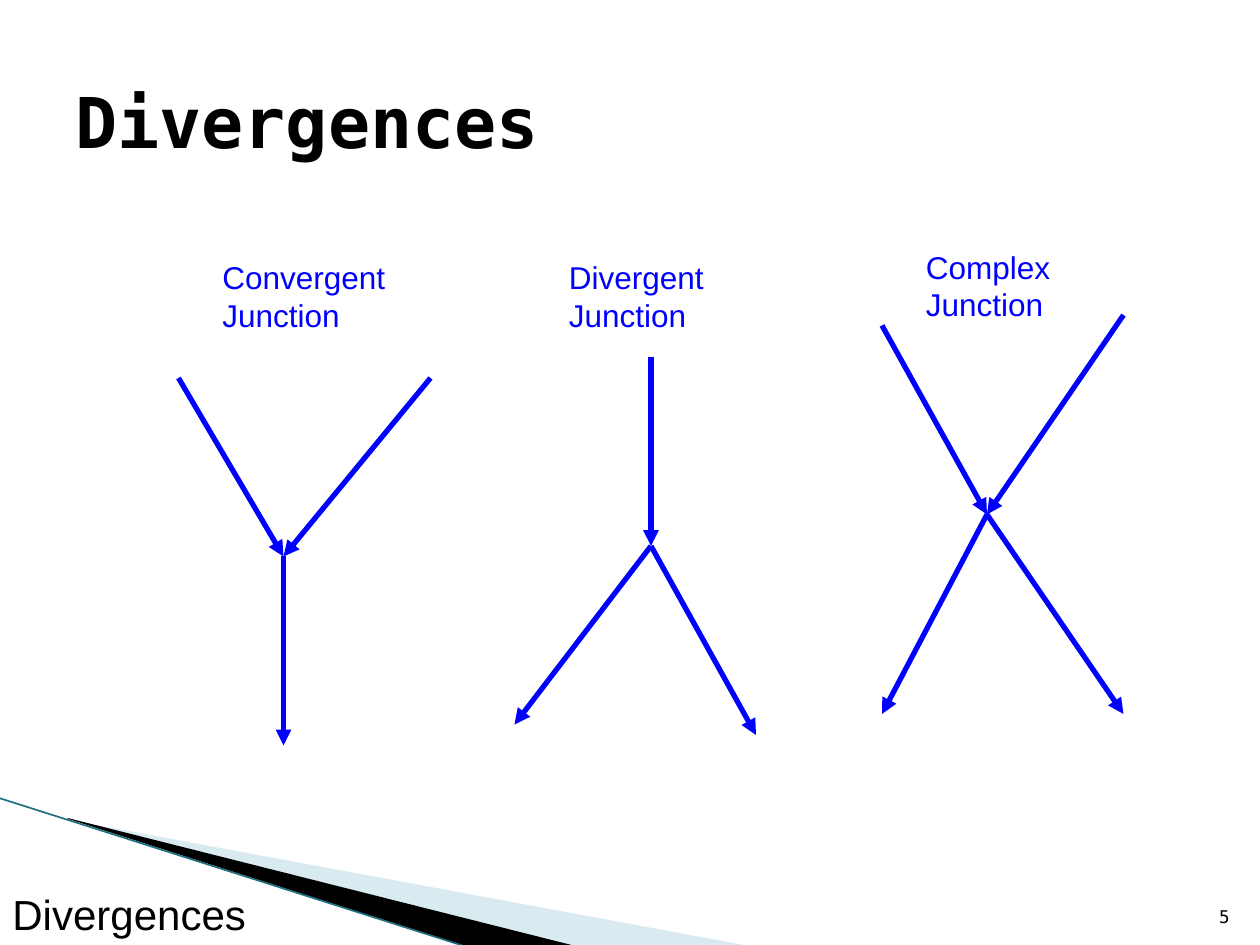
from typing import NamedTuple

from pptx import Presentation
from pptx.dml.color import RGBColor
from pptx.enum import shapes, text
from pptx.oxml import ns
from pptx import util as u
from lxml import etree

EMU_PER_PX = 7620
BLACK = RGBColor(0x00, 0x00, 0x00)
BLUE = RGBColor(0x00, 0x00, 0xFF)
PALE_BLUE = RGBColor(0xA0, 0xCB, 0xDC)
TEAL = RGBColor(0x1F, 0x70, 0x83)
SANS = "Arial"
MONO = "DejaVu Sans Mono"

Point = tuple[int, int]


class Label(NamedTuple):
    wording: str
    left: int
    top: int
    width: int
    height: int
    size: int
    font: str = SANS
    colour: RGBColor = BLACK
    bold: bool = False
    wrap: bool = True
    anchor: text.MSO_ANCHOR = text.MSO_ANCHOR.TOP
    align: text.PP_ALIGN = text.PP_ALIGN.LEFT


class Junction(NamedTuple):
    label: Label
    hub: Point
    sources: list[Point]
    targets: list[Point]


class Wedge(NamedTuple):
    points: list[Point]
    colour: RGBColor
    opacity: int = 100


def junction_label(kind: str, left: int, top: int, width: int) -> Label:
    return Label(f"{kind}\nJunction", left, top, width, 84, 18, colour=BLUE, wrap=False)


WEDGES = [
    Wedge([(66, 781), (714, 901), (547, 901), (66, 780)], PALE_BLUE, 40),
    Wedge([(64, 779), (548, 901), (446, 902), (65, 780)], BLACK),
]
LABELS = [
    Label("Divergences", 60, 50, 1080, 130, 40, MONO, bold=True,
          anchor=text.MSO_ANCHOR.MIDDLE),
    Label("5", 1135, 841, 48, 48, 10, MONO, anchor=text.MSO_ANCHOR.BOTTOM,
          align=text.PP_ALIGN.RIGHT),
    Label("Divergences", 0, 838, 280, 62, 24, anchor=text.MSO_ANCHOR.BOTTOM),
]
JUNCTIONS = [
    Junction(junction_label("Convergent", 200, 240, 179), (270, 530),
             [(170, 360), (410, 360)], [(270, 710)]),
    Junction(junction_label("Divergent", 530, 240, 152), (620, 520),
             [(620, 340)], [(490, 690), (720, 700)]),
    Junction(junction_label("Complex", 870, 230, 143), (940, 490),
             [(840, 310), (1070, 300)], [(1070, 680), (840, 680)]),
]


def px(length: int) -> u.Emu:
    return u.Emu(length * EMU_PER_PX)


def draw_wedge(page, wedge: Wedge) -> None:
    start, *rest = wedge.points
    builder = page.shapes.build_freeform(*start, scale=EMU_PER_PX)
    builder.add_line_segments(rest, close=True)
    shape = builder.convert_to_shape()
    shape.shadow.inherit = False
    shape.line.fill.background()
    shape.fill.solid()
    shape.fill.fore_color.rgb = wedge.colour
    if wedge.opacity < 100:
        colour = shape.fill._xPr.find(".//" + ns.qn("a:srgbClr"))
        etree.SubElement(colour, ns.qn("a:alpha"), val=str(wedge.opacity * 1000))


def draw_line(page, start: Point, end: Point, colour: RGBColor, width: float,
              arrow: bool = False) -> None:
    line = page.shapes.add_connector(
        shapes.MSO_CONNECTOR.STRAIGHT, *map(px, start + end))
    line.line.color.rgb = colour
    line.line.width = u.Pt(width)
    if arrow:
        etree.SubElement(line.line._get_or_add_ln(), ns.qn("a:tailEnd"), type="triangle")
    etree.SubElement(line._element.spPr, ns.qn("a:effectLst"))


def draw_label(page, label: Label) -> None:
    box = page.shapes.add_textbox(
        px(label.left), px(label.top), px(label.width), px(label.height))
    frame = box.text_frame
    frame.word_wrap = label.wrap
    frame.vertical_anchor = label.anchor
    frame.text = label.wording
    for para in frame.paragraphs:
        para.alignment = label.align
        for span in para.runs:
            span.font.name = label.font
            span.font.size = u.Pt(label.size)
            span.font.bold = label.bold
            span.font.color.rgb = label.colour


def draw_junction(page, junction: Junction) -> None:
    for source in junction.sources:
        draw_line(page, source, junction.hub, BLUE, 3, arrow=True)
    for target in junction.targets:
        draw_line(page, junction.hub, target, BLUE, 3, arrow=True)
    draw_label(page, junction.label)


def main() -> None:
    deck = Presentation()
    deck.slide_width, deck.slide_height = px(1200), px(900)
    page = deck.slides.add_slide(deck.slide_layouts[6])
    for wedge in WEDGES:
        draw_wedge(page, wedge)
    draw_line(page, (-1, 760), (445, 902), TEAL, 0.95)
    for label in LABELS:
        draw_label(page, label)
    for junction in JUNCTIONS:
        draw_junction(page, junction)
    deck.save("out.pptx")


if __name__ == "__main__":
    main()
